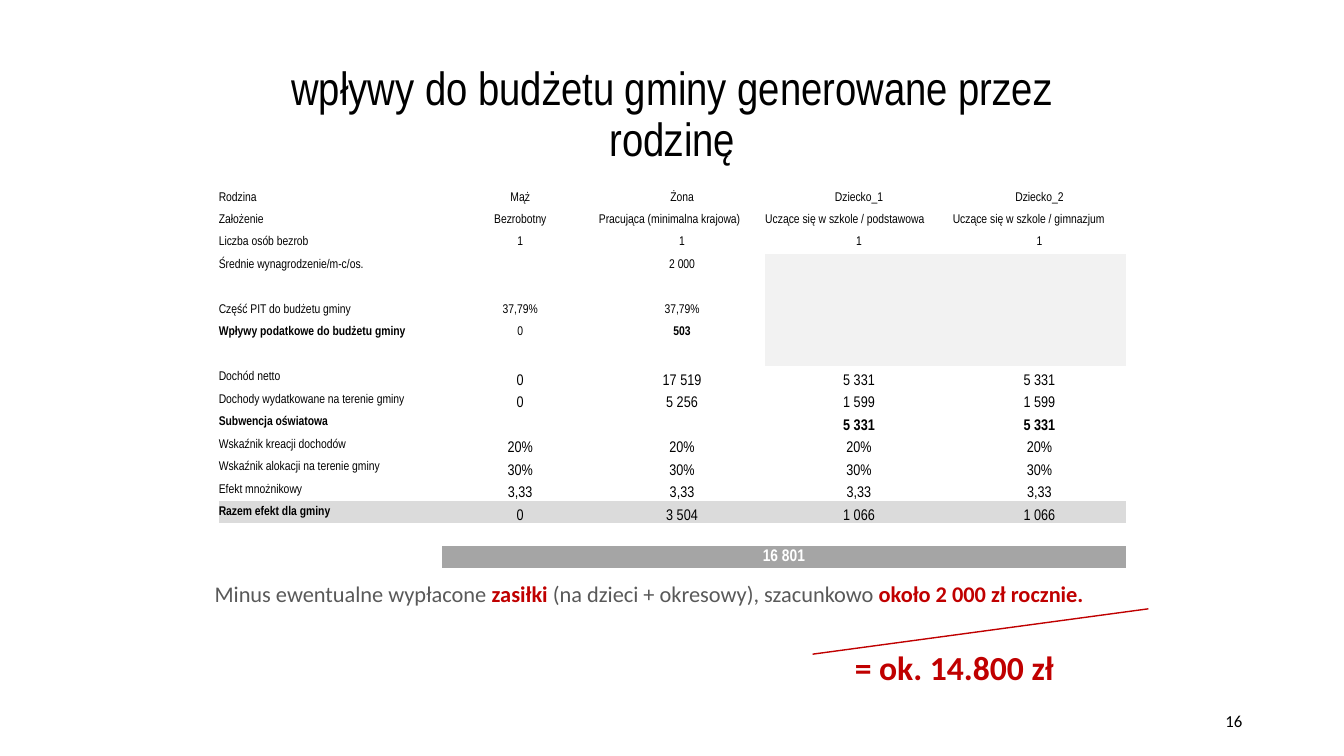
import pptx
import pptx.util
import pptx.dml.color
import pptx.enum.shapes
import pptx.enum.text
import pptx.oxml.ns
import lxml.etree

Inches = pptx.util.Inches
Pt = pptx.util.Pt
ALIGN = pptx.enum.text.PP_ALIGN
ANCHOR = pptx.enum.text.MSO_ANCHOR
qn = pptx.oxml.ns.qn

COLORS = {
    "black": "000000", "white": "FFFFFF", "text": "595959", "red": "C00000",
    "blank": "F2F2F2", "result": "DBDBDB", "total": "A5A5A5",
}
TITLE = "wpływy do budżetu gminy generowane przez rodzinę"
ROWS = [
    ["Rodzina", "Mąż", "Żona", "Dziecko_1", "Dziecko_2"],
    ["Założenie", "Bezrobotny", "Pracująca (minimalna krajowa)",
     "Uczące się w szkole / podstawowa", "Uczące się w szkole / gimnazjum"],
    ["Liczba osób bezrob", "1", "1", "1", "1"],
    ["Średnie wynagrodzenie/m-c/os.", "", "2 000", "", ""],
    ["", "", "", "", ""],
    ["Część PIT do budżetu gminy", "37,79%", "37,79%", "", ""],
    ["Wpływy podatkowe do budżetu gminy", "0", "503", "", ""],
    ["", "", "", "", ""],
    ["Dochód netto", "0", "17 519", "5 331", "5 331"],
    ["Dochody wydatkowane na terenie gminy", "0", "5 256", "1 599", "1 599"],
    ["Subwencja oświatowa", "", "", "5 331", "5 331"],
    ["Wskaźnik kreacji dochodów", "20%", "20%", "20%", "20%"],
    ["Wskaźnik alokacji na terenie gminy", "30%", "30%", "30%", "30%"],
    ["Efekt mnożnikowy", "3,33", "3,33", "3,33", "3,33"],
    ["Razem efekt dla gminy", "0", "3 504", "1 066", "1 066"],
    ["", "", "", "", ""],
    ["", "16 801", "", "", ""],
]
COLUMN_WIDTHS = [2.21, 1.56, 1.65, 1.86, 1.72]
TABLE_HEIGHT = 3.79
ASSUMPTIONS, NET_INCOME, RESULT, TOTAL = 1, 8, 14, 16
BLANK_ROWS = range(3, 8)
BOLD_CELLS = {(6, 0), (6, 2), (10, 0), (10, 3), (10, 4), (RESULT, 0), (TOTAL, 1)}
NO_GRID_STYLE = "{2D5ABB26-0587-4C30-8999-92F81FD0307C}"

TEXT_BOXES = [
    ((9.42, 6.95, 3, 0.4), 12, ALIGN.RIGHT, ANCHOR.MIDDLE, [("16", "black", False)]),
    ((2.03, 5.71, 9.67, 0.64), 16, ALIGN.LEFT, ANCHOR.TOP, [
        ("Minus ewentualne wypłacone ", "text", False),
        ("zasiłki", "red", True),
        (" (na dzieci + okresowy), szacunkowo ", "text", False),
        ("około 2 000 zł rocznie.", "red", True),
    ]),
    ((8.38, 6.37, 3.28, 0.5), 24, ALIGN.LEFT, ANCHOR.TOP,
     [("= ok. 14.800 zł", "red", True)]),
]


def rgb(name):
    return pptx.dml.color.RGBColor.from_string(COLORS[name])


def add_run(p, text, font, size, color, bold=False):
    r = p.add_run()
    r.text = text
    r.font.name = font
    r.font.size = Pt(size)
    r.font.bold = bold
    r.font.color.rgb = rgb(color)


def cell_fill(row, col):
    if row in BLANK_ROWS and col >= 3:
        return "blank"
    if row == RESULT:
        return "result"
    if row == TOTAL and col >= 1:
        return "total"
    return None


def format_cell(cell, row, col, text):
    cell.margin_left = cell.margin_right = cell.margin_top = cell.margin_bottom = 0
    fill = cell_fill(row, col)
    if fill:
        cell.fill.solid()
        cell.fill.fore_color.rgb = rgb(fill)
    else:
        cell.fill.background()
    p = cell.text_frame.paragraphs[0]
    if not text:
        lxml.etree.SubElement(p._p, qn("a:endParaRPr")).set("sz", "900")
        return
    amount = col > 0 and NET_INCOME <= row <= RESULT
    cell.vertical_anchor = ANCHOR.BOTTOM if amount else ANCHOR.MIDDLE
    left = col == 0 or (row == ASSUMPTIONS and col >= 2)
    p.alignment = ALIGN.LEFT if left else ALIGN.CENTER
    size = 12 if row == TOTAL else 11 if amount else 9
    color = "white" if row == TOTAL else "black"
    add_run(p, text, "Arial Narrow", size, color, (row, col) in BOLD_CELLS)


def add_title(slide):
    sp = slide.shapes.title
    sp.left, sp.top, sp.width, sp.height = map(Inches, (2.17, 1.03, 9, 0.67))
    tf = sp.text_frame
    tf.word_wrap = True
    tf.auto_size = pptx.enum.text.MSO_AUTO_SIZE.NONE
    tf.vertical_anchor = ANCHOR.BOTTOM
    p = tf.paragraphs[0]
    p.alignment = ALIGN.CENTER
    p.line_spacing = 0.9
    add_run(p, TITLE, "Arial Narrow", 33.3, "black")


def add_budget_table(slide):
    frame = slide.shapes.add_table(
        len(ROWS), len(COLUMN_WIDTHS), Inches(2.17), Inches(1.85),
        Inches(sum(COLUMN_WIDTHS)), Inches(TABLE_HEIGHT))
    table = frame.table
    table.first_row = table.horz_banding = False
    table._tbl.tblPr.find(qn("a:tableStyleId")).text = NO_GRID_STYLE
    for column, width in zip(table.columns, COLUMN_WIDTHS):
        column.width = Inches(width)
    for row, texts in enumerate(ROWS):
        table.rows[row].height = Inches(TABLE_HEIGHT / len(ROWS))
        for col, text in enumerate(texts):
            format_cell(table.cell(row, col), row, col, text)
    table.cell(TOTAL, 1).merge(table.cell(TOTAL, 4))


def add_text(slide, box, size, align, anchor, runs):
    tf = slide.shapes.add_textbox(*map(Inches, box)).text_frame
    tf.word_wrap = True
    tf.vertical_anchor = anchor
    p = tf.paragraphs[0]
    p.alignment = align
    for text, color, bold in runs:
        add_run(p, text, "Calibri", size, color, bold)


def add_sum_line(slide):
    line = slide.shapes.add_connector(
        pptx.enum.shapes.MSO_CONNECTOR.STRAIGHT,
        Inches(8.06), Inches(6.49), Inches(11.39), Inches(6.04))
    line.line.color.rgb = rgb("red")
    line.line.width = Pt(1)
    lxml.etree.SubElement(line._element.spPr, qn("a:effectLst"))


def main():
    prs = pptx.Presentation()
    prs.slide_width, prs.slide_height = Inches(13.33), Inches(7.5)
    slide = prs.slides.add_slide(prs.slide_layouts[5])
    add_title(slide)
    add_budget_table(slide)
    for content in TEXT_BOXES:
        add_text(slide, *content)
    add_sum_line(slide)
    prs.save("out.pptx")


if __name__ == "__main__":
    main()
